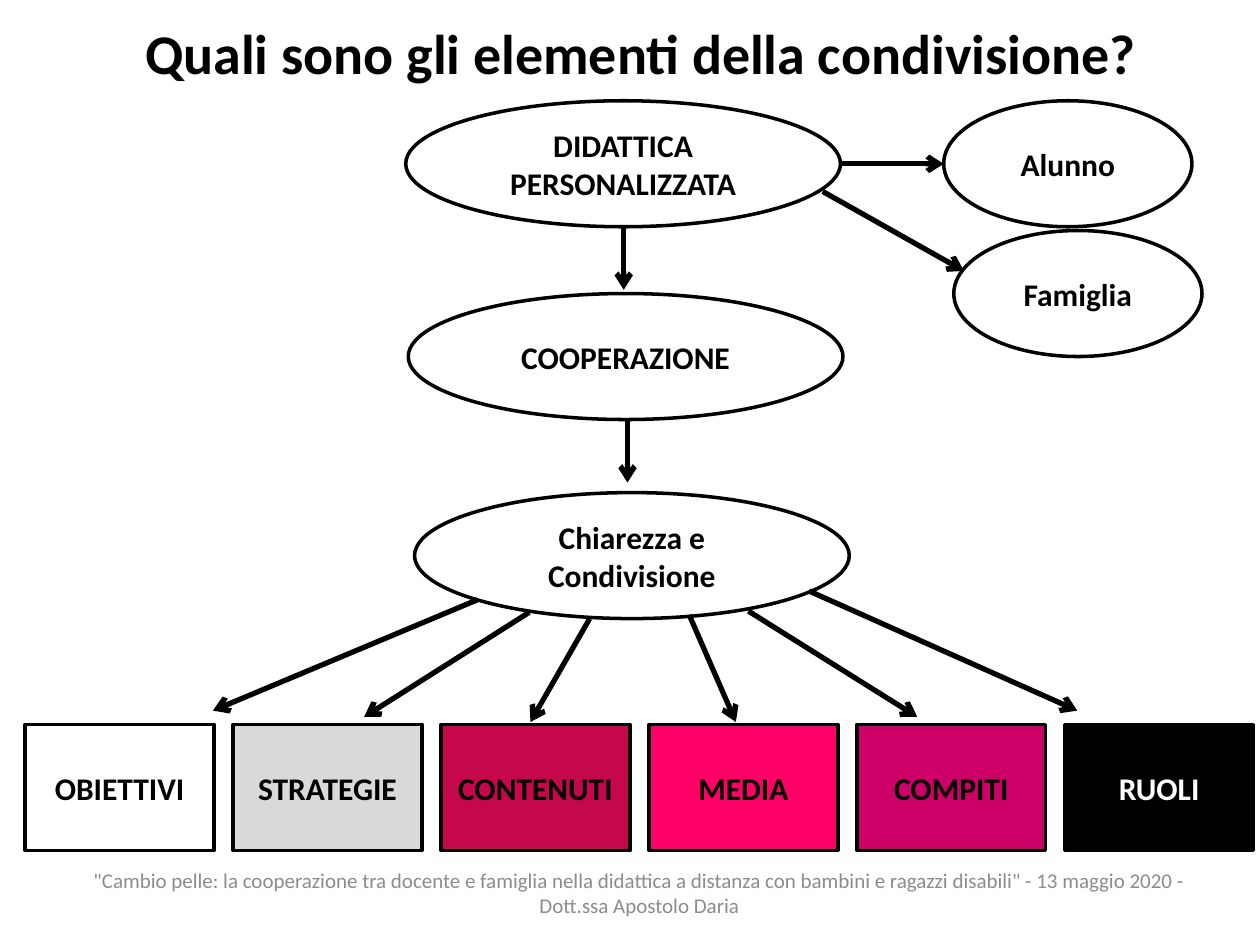
from lxml import etree
from pptx import Presentation
from pptx.dml.color import RGBColor
from pptx.enum.shapes import MSO_CONNECTOR, MSO_SHAPE
from pptx.enum.text import MSO_ANCHOR, PP_ALIGN
from pptx.oxml.ns import qn
from pptx.util import Inches, Pt

OVAL, RECT = MSO_SHAPE.OVAL, MSO_SHAPE.RECTANGLE
STRAIGHT = MSO_CONNECTOR.STRAIGHT
TOP, MIDDLE = MSO_ANCHOR.TOP, MSO_ANCHOR.MIDDLE
CENTER = PP_ALIGN.CENTER

BLACK = RGBColor(0x00, 0x00, 0x00)
WHITE = RGBColor(0xFF, 0xFF, 0xFF)
SILVER = RGBColor(0xD9, 0xD9, 0xD9)
GRAY = RGBColor(0x8C, 0x8C, 0x8C)
CRIMSON = RGBColor(0xC5, 0x07, 0x4B)
PINK = RGBColor(0xFF, 0x00, 0x66)
MAGENTA = RGBColor(0xCC, 0x00, 0x66)

FONT = "Calibri"
WIDTH, HEIGHT = Inches(10), Inches(7.5)
COLS, ROWS = 10, 7.5
TALL, WIDE, SMALL = 1, 3.45, 1.97
BOX, STEP, EDGE, BASE = 1.5, 1.65, 0.2, 5.75

OVALS = [
    ("DIDATTICA PERSONALIZZATA", 3.22, 0.8, WIDE),
    ("COOPERAZIONE", 3.24, 2.33, WIDE),
    ("Chiarezza e Condivisione", 3.29, 3.91, WIDE),
    ("Alunno", 7.49, 0.8, SMALL),
    ("Famiglia", 7.57, 1.83, SMALL),
]
BOXES = [
    ("OBIETTIVI", WHITE, BLACK),
    ("STRATEGIE", SILVER, BLACK),
    ("CONTENUTI", CRIMSON, BLACK),
    ("MEDIA", PINK, BLACK),
    ("COMPITI", MAGENTA, BLACK),
    ("RUOLI", BLACK, WHITE),
]
ARROWS = [
    (6.67, 1.3, 7.49, 1.3),
    (6.53, 1.52, 7.65, 2.15),
    (4.95, 1.8, 4.95, 2.3),
    (4.98, 3.33, 4.98, 3.83),
    (3.79, 4.76, 1.69, 5.64),
    (4.2, 4.86, 2.89, 5.69),
    (4.68, 4.91, 4.21, 5.73),
    (5.47, 4.88, 5.84, 5.73),
    (5.94, 4.85, 7.28, 5.69),
    (6.42, 4.69, 8.55, 5.64),
]


def across(cols):
    """Turn grid columns into a length."""
    return round(WIDTH * cols / COLS)


def down(rows):
    """Turn grid rows into a length."""
    return round(HEIGHT * rows / ROWS)


def area(left, top, wide, tall):
    """Turn a grid area into slide lengths."""
    return across(left), down(top), across(wide), down(tall)


def write(shape, text, size, color, bold=True, anchor=MIDDLE):
    """Write one centred run into a shape."""
    frame = shape.text_frame
    frame.word_wrap = True
    frame.vertical_anchor = anchor
    para = frame.paragraphs[0]
    para.alignment = CENTER
    run = para.add_run()
    run.text = text
    font = run.font
    font.name, font.size, font.bold = FONT, Pt(size), bold
    font.color.rgb = color


def add_label(slide, place, text, size, color, bold, anchor):
    """Add a plain text box."""
    label = slide.shapes.add_textbox(*area(*place))
    write(label, text, size, color, bold, anchor)


def add_node(slide, kind, place, text, fill=WHITE, color=BLACK):
    """Add an outlined shape with a bold caption."""
    node = slide.shapes.add_shape(kind, *area(*place))
    node.shadow.inherit = False
    node.fill.solid()
    node.fill.fore_color.rgb = fill
    node.line.color.rgb = BLACK
    node.line.width = Pt(2)
    write(node, text, 18, color)


def add_arrow(slide, left, top, right, low):
    """Add a straight line with an open head at its end."""
    arrow = slide.shapes.add_connector(
        STRAIGHT, across(left), down(top), across(right), down(low))
    arrow.line.color.rgb = BLACK
    arrow.line.width = Pt(3)
    etree.SubElement(arrow.line._get_or_add_ln(), qn("a:tailEnd"), type="arrow")
    etree.SubElement(arrow._element.spPr, qn("a:effectLst"))


def main():
    """Build the concept map and save it."""
    deck = Presentation()
    deck.slide_width, deck.slide_height = WIDTH, HEIGHT
    slide = deck.slides.add_slide(deck.slide_layouts[6])
    add_label(slide, (0.64, 0.1, 9, 0.55),
              "Quali sono gli elementi della condivisione? ",
              32, BLACK, True, TOP)
    for text, left, top, wide in OVALS:
        add_node(slide, OVAL, (left, top, wide, TALL), text)
    for col, (text, fill, color) in enumerate(BOXES):
        place = (EDGE + col * STEP, BASE, BOX, TALL)
        add_node(slide, RECT, place, text, fill, color)
    for ends in ARROWS:
        add_arrow(slide, *ends)
    add_label(slide, (0.51, 6.82, 9.13, 0.53),
              '"Cambio pelle: la cooperazione tra docente e famiglia nella '
              'didattica a distanza con bambini e ragazzi disabili" - '
              '13 maggio 2020 - Dott.ssa Apostolo Daria',
              12, GRAY, False, MIDDLE)
    deck.save("out.pptx")


if __name__ == "__main__":
    main()
